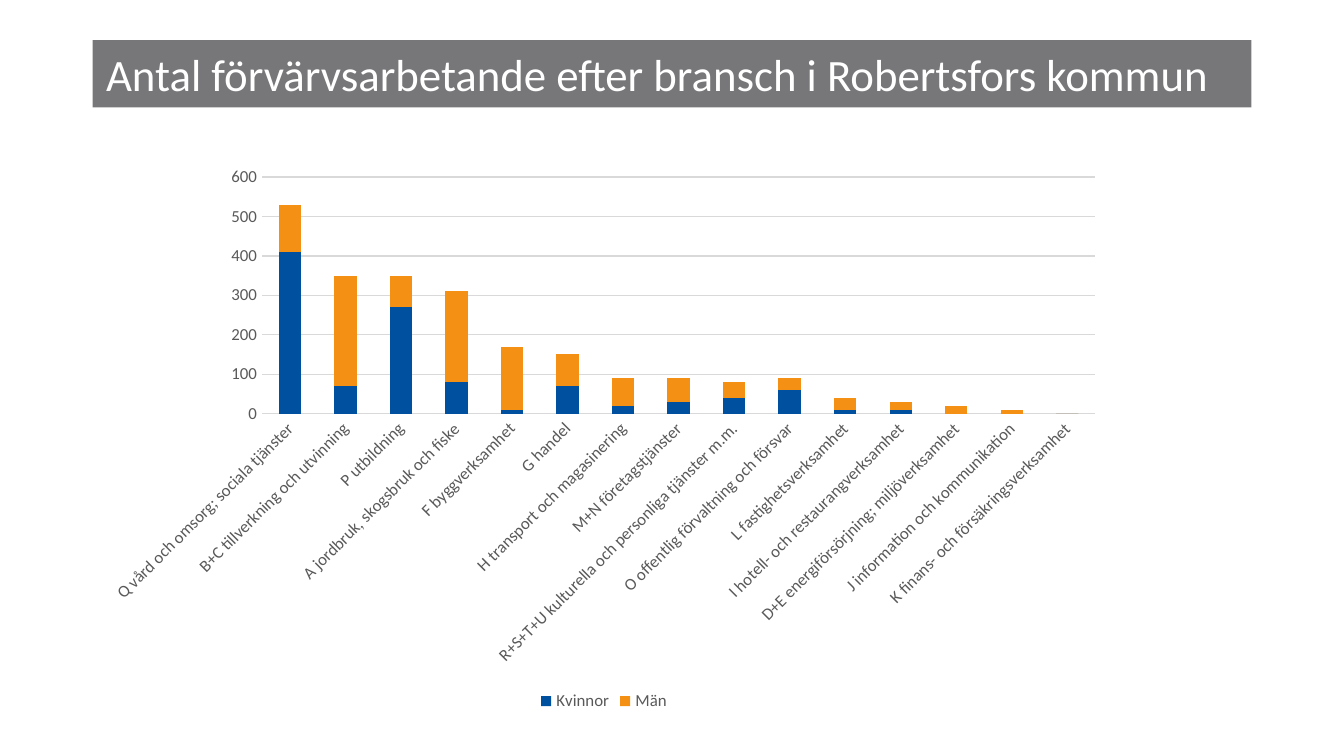
from pptx import Presentation
from pptx.chart.data import CategoryChartData
from pptx.dml.color import RGBColor
from pptx.enum import chart as charts, text
from pptx.util import Cm, Pt

WHITE = RGBColor(0xFF, 0xFF, 0xFF)
BANNER_GREY = RGBColor(0x77, 0x77, 0x7A)
LABEL_GREY = RGBColor(0x59, 0x59, 0x59)
LINE_GREY = RGBColor(0xD9, 0xD9, 0xD9)
BLUE = RGBColor(0x00, 0x50, 0xA0)
ORANGE = RGBColor(0xF4, 0x90, 0x14)
FONT = "Calibri"

INDUSTRIES = [
    ("Q vård och omsorg; sociala tjänster", 410, 120),
    ("B+C tillverkning och utvinning", 70, 280),
    ("P utbildning", 270, 80),
    ("A jordbruk, skogsbruk och fiske", 80, 230),
    ("F byggverksamhet", 10, 160),
    ("G handel", 70, 80),
    ("H transport och magasinering", 20, 70),
    ("M+N företagstjänster", 30, 60),
    ("R+S+T+U kulturella och personliga tjänster m.m.", 40, 40),
    ("O offentlig förvaltning och försvar", 60, 30),
    ("L fastighetsverksamhet", 10, 30),
    ("I hotell- och restaurangverksamhet", 10, 20),
    ("D+E energiförsörjning; miljöverksamhet", 0, 20),
    ("J information och kommunikation", 0, 10),
    ("K finans- och försäkringsverksamhet", 0, 0),
]


def style_font(font, size, color):
    """Apply the slide's typeface with a size and colour."""
    font.name = FONT
    font.size = Pt(size)
    font.color.rgb = color


def style_line(line):
    """Draw a thin light grey line."""
    line.color.rgb = LINE_GREY
    line.width = Pt(0.75)


def fill_title(title, wording):
    """Turn the title placeholder into a grey banner."""
    title.left, title.top = Cm(1.75), Cm(0.76)
    title.width, title.height = Cm(21.9), Cm(1.27)
    title.fill.solid()
    title.fill.fore_color.rgb = BANNER_GREY
    frame = title.text_frame
    frame.text = wording
    frame.word_wrap = True
    frame.auto_size = text.MSO_AUTO_SIZE.NONE
    frame.vertical_anchor = text.MSO_ANCHOR.MIDDLE
    paragraph = frame.paragraphs[0]
    paragraph.alignment = text.PP_ALIGN.LEFT
    style_font(paragraph.font, 24, WHITE)


def style_axes(chart):
    """Format both axes, the gridlines and the slanted category labels."""
    for axis in (chart.category_axis, chart.value_axis):
        axis.major_tick_mark = charts.XL_TICK_MARK.NONE
        axis.minor_tick_mark = charts.XL_TICK_MARK.NONE
        style_font(axis.tick_labels.font, 9, LABEL_GREY)
    style_line(chart.category_axis.format.line)
    for body in chart.category_axis._element.xpath("c:txPr/a:bodyPr"):
        body.set("rot", "-2700000")
    values = chart.value_axis
    values.minimum_scale, values.maximum_scale, values.major_unit = 0, 600, 100
    values.tick_labels.number_format = "0"
    values.tick_labels.number_format_is_linked = False
    values.format.line.fill.background()
    values.has_major_gridlines = True
    style_line(values.major_gridlines.format.line)


def add_industry_chart(page):
    """Add the stacked columns of women and men per industry."""
    names, women, men = zip(*INDUSTRIES)
    data = CategoryChartData(number_format="0")
    data.categories = names
    data.add_series("Kvinnor", women)
    data.add_series("Män", men)
    chart = page.shapes.add_chart(
        charts.XL_CHART_TYPE.COLUMN_STACKED,
        Cm(1.75), Cm(2.95), Cm(19.33), Cm(10.59), data).chart
    style_font(chart.font, 10, RGBColor(0, 0, 0))
    chart.has_title = False
    plot = chart.plots[0]
    plot.gap_width, plot.overlap = 150, 100
    plot.vary_by_categories = False
    for series, color in zip(plot.series, (BLUE, ORANGE)):
        series.format.fill.solid()
        series.format.fill.fore_color.rgb = color
    style_axes(chart)
    chart.has_legend = True
    chart.legend.position = charts.XL_LEGEND_POSITION.BOTTOM
    chart.legend.include_in_layout = False
    style_font(chart.legend.font, 9, LABEL_GREY)


def main():
    """Build and save the slide."""
    deck = Presentation()
    deck.slide_width, deck.slide_height = Cm(25.4), Cm(14.29)
    page = deck.slides.add_slide(deck.slide_layouts[5])
    fill_title(page.shapes.title,
               "Antal förvärvsarbetande efter bransch i Robertsfors kommun")
    add_industry_chart(page)
    deck.save("out.pptx")


if __name__ == "__main__":
    main()
